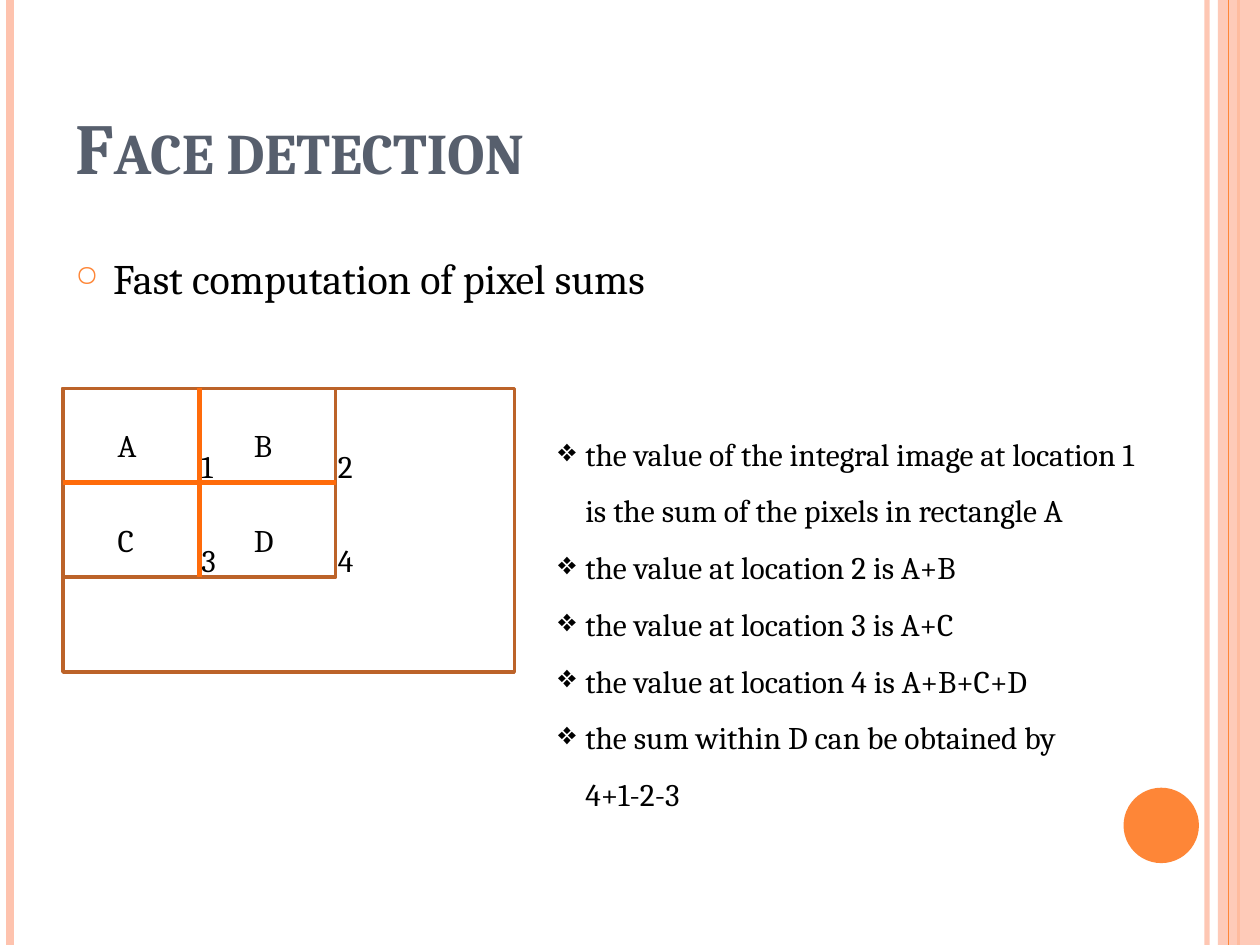
from dataclasses import dataclass

from lxml.etree import SubElement
from pptx import Presentation
from pptx.dml.color import RGBColor
from pptx.enum.shapes import MSO_CONNECTOR as Connector, MSO_SHAPE as Shape
from pptx.enum.text import MSO_ANCHOR as Anchor, MSO_AUTO_SIZE as AutoSize, PP_ALIGN as Align
from pptx.oxml.ns import qn
from pptx.util import Cm, Pt


@dataclass(frozen=True)
class Theme:
    font: str = "Cambria"
    text: str = "000000"
    title: str = "575F6D"
    accent: str = "FE8637"
    band: str = "FEC3AE"
    frame: str = "BC6329"
    divider: str = "FF6B0A"
    title_size: float = 41
    body_size: float = 24
    label_size: float = 18


THEME = Theme()
SLIDE_W, SLIDE_H = 25.4, 19.05
MARGIN, CONTENT_W = 1.27, 20.75

# Integral image diagram, in cm
DIAGRAM_TOP = 7.83
DIAGRAM_W, DIAGRAM_H = 9.1, 5.72
CELL_W, CELL_H = 2.75, 1.9
REGIONS = ["AB", "CD"]
LOCATIONS = ["12", "34"]

FACTS = [
    ("the value of the integral image at location 1", True),
    ("is the sum of the pixels in rectangle A", False),
    ("the value at location 2 is A+B", True),
    ("the value at location 3 is A+C", True),
    ("the value at location 4 is A+B+C+D", True),
    ("the sum within D can be obtained by", True),
    ("4+1-2-3", False),
]


def set_alpha(fill_parent, percent):
    color = fill_parent.find(qn("a:solidFill"))[0]
    SubElement(color, qn("a:alpha")).set("val", str(percent * 1000))


def add_line(slide, start, end, color, weight, alpha=None):
    line = slide.shapes.add_connector(
        Connector.STRAIGHT, *(Cm(value) for value in (*start, *end)))
    line.line.color.rgb = RGBColor.from_string(color)
    line.line.width = Pt(weight)
    properties = line._element.spPr
    SubElement(properties, qn("a:effectLst"))
    if alpha:
        set_alpha(properties.find(qn("a:ln")), alpha)


def add_figure(slide, kind, box, fill=None, outline=None, alpha=None):
    figure = slide.shapes.add_shape(kind, *map(Cm, box))
    figure.shadow.inherit = False
    if fill:
        figure.fill.solid()
        figure.fill.fore_color.rgb = RGBColor.from_string(fill)
    else:
        figure.fill.background()
    if outline:
        figure.line.color.rgb = RGBColor.from_string(outline)
        figure.line.width = Pt(2)
    else:
        figure.line.fill.background()
    if alpha:
        set_alpha(figure._element.spPr, alpha)


def add_run(paragraph, text, size, color=THEME.text):
    run = paragraph.add_run()
    run.text = text
    run.font.name = THEME.font
    run.font.size = Pt(size)
    run.font.color.rgb = RGBColor.from_string(color)
    return run


def add_text_frame(slide, box, wrap=True):
    frame = slide.shapes.add_textbox(*map(Cm, box)).text_frame
    frame.word_wrap = wrap
    return frame


def set_bullet(paragraph, symbol, indent, color=None, percent=None):
    """Indent the paragraph, hanging a bullet in the indent if there is a symbol."""
    properties = paragraph._p.get_or_add_pPr()
    properties.set("marL", str(Cm(indent)))
    properties.set("indent", str(-Cm(indent) if symbol else 0))
    if color:
        bullet_color = SubElement(properties, qn("a:buClr"))
        SubElement(bullet_color, qn("a:srgbClr")).set("val", color)
    if percent:
        SubElement(properties, qn("a:buSzPct")).set("val", str(percent * 1000))
    if symbol:
        SubElement(properties, qn("a:buChar")).set("char", symbol)


def add_decoration(slide):
    for x, color, weight, alpha in [
        (24.33, THEME.band, 3, 93),
        (0.21, THEME.band, 4.5, None),
        (24.97, THEME.accent, 1.5, None),
    ]:
        add_line(slide, (x, 0), (x, SLIDE_H), color, weight, alpha)
    add_figure(slide, Shape.RECTANGLE, (24.55, 0, 0.85, SLIDE_H), THEME.band, alpha=87)
    add_line(slide, (24.77, 0), (24.77, SLIDE_H), THEME.accent, 0.75)
    add_figure(slide, Shape.OVAL, (22.65, 15.88, 1.52, 1.52), THEME.accent)


def add_title(slide, text):
    title = slide.shapes.title
    title.left, title.top, title.width, title.height = map(
        Cm, (MARGIN, 0.76, CONTENT_W, 3.18))
    frame = title.text_frame
    frame.auto_size = AutoSize.NONE
    frame.vertical_anchor = Anchor.BOTTOM
    paragraph = frame.paragraphs[0]
    paragraph.alignment = Align.LEFT
    run = add_run(paragraph, text, THEME.title_size, THEME.title)
    run.font.bold = True
    run._r.get_or_add_rPr().set("cap", "small")


def add_topic(slide, text):
    frame = add_text_frame(slide, (MARGIN, 4.45, CONTENT_W, 2))
    paragraph = frame.paragraphs[0]
    paragraph.line_spacing = 1.5
    paragraph.space_before = Pt(6)
    set_bullet(paragraph, "○", 0.76, THEME.accent, 70)
    add_run(paragraph, text, THEME.body_size)


def add_cell_labels(slide, rows, dx, dy, width, wrap):
    """Place one label per grid cell, offset from the cell's top left corner."""
    for row, labels in enumerate(rows):
        for column, label in enumerate(labels):
            x = MARGIN + column * CELL_W + dx
            y = DIAGRAM_TOP + row * CELL_H + dy
            frame = add_text_frame(slide, (x, y, width, 1.02), wrap)
            add_run(frame.paragraphs[0], label, THEME.label_size)


def add_diagram(slide):
    grid_w, grid_h = 2 * CELL_W, 2 * CELL_H
    for width, height in [(DIAGRAM_W, DIAGRAM_H), (grid_w, grid_h)]:
        add_figure(slide, Shape.RECTANGLE, (MARGIN, DIAGRAM_TOP, width, height),
                   outline=THEME.frame)
    middle_x, middle_y = MARGIN + CELL_W, DIAGRAM_TOP + CELL_H
    add_line(slide, (MARGIN, middle_y), (MARGIN + grid_w, middle_y), THEME.divider, 3)
    add_line(slide, (middle_x, DIAGRAM_TOP), (middle_x, DIAGRAM_TOP + grid_h),
             THEME.divider, 3)
    add_cell_labels(slide, REGIONS, 0.85, 0.64, 0.97, wrap=False)
    add_cell_labels(slide, LOCATIONS, CELL_W - 0.21, CELL_H - 0.84, 0.64, wrap=True)


def add_facts(slide):
    frame = add_text_frame(slide, (11, 8.26, 14, 10.64))
    for index, (fact, starts_item) in enumerate(FACTS):
        paragraph = frame.add_paragraph() if index else frame.paragraphs[0]
        paragraph.line_spacing = 1.5
        set_bullet(paragraph, "❖" if starts_item else None, 0.55)
        add_run(paragraph, fact, THEME.label_size)


def main():
    deck = Presentation()
    deck.slide_width, deck.slide_height = Cm(SLIDE_W), Cm(SLIDE_H)
    slide = deck.slides.add_slide(deck.slide_layouts.get_by_name("Title Only"))
    add_decoration(slide)
    add_topic(slide, "Fast computation of pixel sums")
    add_title(slide, "Face detection")
    add_diagram(slide)
    add_facts(slide)
    deck.save("out.pptx")


if __name__ == "__main__":
    main()
